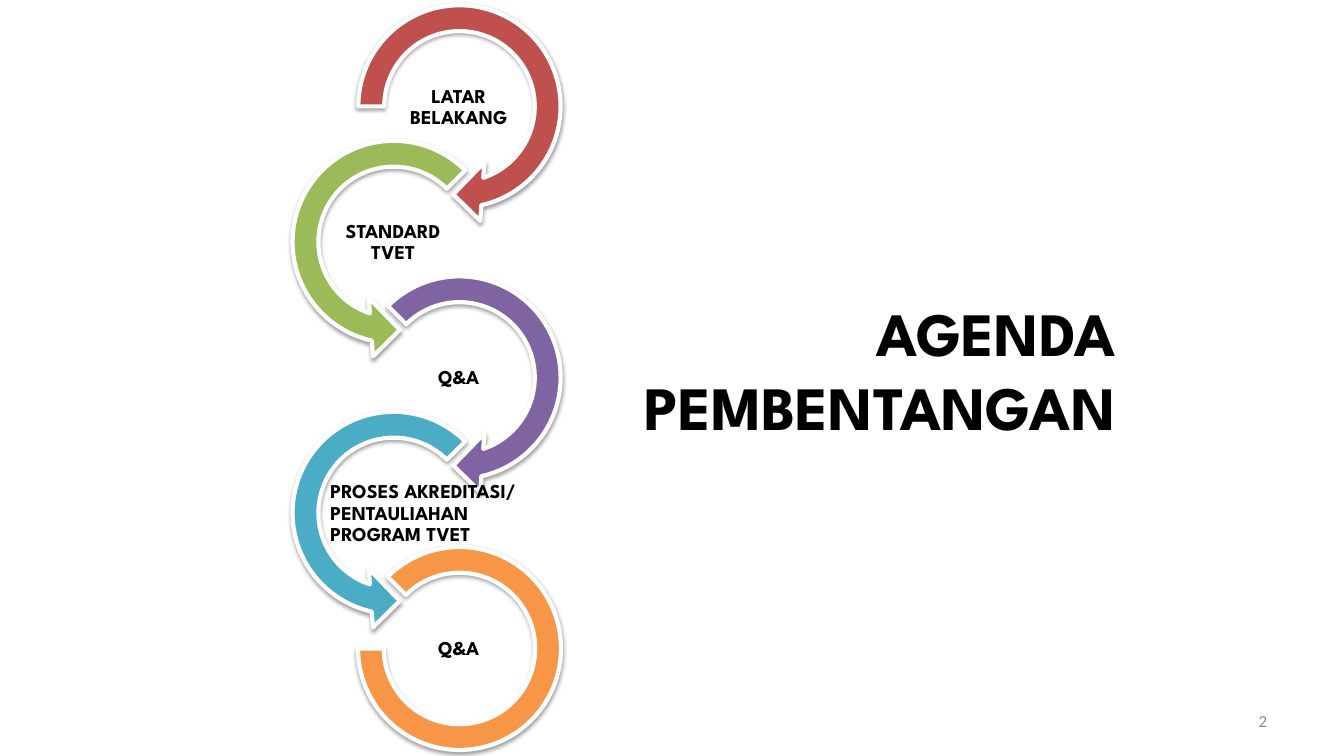
from lxml.etree import SubElement
from pptx import Presentation
from pptx.dml.color import RGBColor
from pptx.enum.shapes import MSO_SHAPE as SHAPE
from pptx.enum.text import MSO_ANCHOR as ANCHOR, PP_ALIGN as ALIGN
from pptx.oxml.ns import qn
from pptx.util import Pt

COLORS = {
    "red": "C0504D", "green": "9BBB59", "purple": "8064A2", "blue": "4BACC6",
    "orange": "F79646", "white": "FFFFFF", "black": "000000", "gray": "8C8C8C",
}
HEADING_FONT = "League Spartan"
RING = 168
STEP = 96.8
RIGHT_ARROW = (SHAPE.CIRCULAR_ARROW, (0.11, 11.42, 45, 135, 0.125))
LEFT_ARROW = (SHAPE.LEFT_CIRCULAR_ARROW, (0.11, 11.42, 63, 189, 0.125))
FIRST_ARROW = (SHAPE.CIRCULAR_ARROW, (0.11, 11.42, 45, 108, 0.125))
LAST_ARC = (SHAPE.BLOCK_ARC, (135, 108, 0.127))
AGENDA = [
    ("LATAR BELAKANG", "red", FIRST_ARROW),
    ("STANDARD TVET", "green", LEFT_ARROW),
    ("Q&A", "purple", RIGHT_ARROW),
    ("PROSES AKREDITASI/ PENTAULIAHAN PROGRAM TVET", "blue", LEFT_ARROW),
    ("Q&A", "orange", LAST_ARC),
]


def rgb(name):
    """Return the palette colour with the given name."""
    return RGBColor.from_string(COLORS[name])


def add_text(slide, text, x, y, w, h, size=14, font=HEADING_FONT, color="black",
             bold=True, align=ALIGN.CENTER, spacing=None, inset=None):
    """Add a wrapped, vertically centred text box."""
    tf = slide.shapes.add_textbox(Pt(x), Pt(y), Pt(w), Pt(h)).text_frame
    tf.word_wrap = True
    tf.vertical_anchor = ANCHOR.MIDDLE
    if inset is not None:
        tf.margin_left = tf.margin_right = tf.margin_top = tf.margin_bottom = Pt(inset)
    p = tf.paragraphs[0]
    p.alignment = align
    p.line_spacing = spacing
    r = p.add_run()
    r.text = text
    r.font.size = Pt(size)
    r.font.name = font
    r.font.bold = bold
    r.font.color.rgb = rgb(color)


def add_shadow(sp):
    """Give the shape a soft shadow straight below it."""
    sp.shadow.inherit = False
    effects = sp._element.spPr.find(qn("a:effectLst"))
    shadow = SubElement(effects, qn("a:outerShdw"), blurRad=str(Pt(3.1)),
                        dist=str(Pt(1.6)), dir="5400000", rotWithShape="0")
    black = SubElement(shadow, qn("a:srgbClr"), val=COLORS["black"])
    SubElement(black, qn("a:alpha"), val="38000")


def add_ring(slide, x, y, size, color, kind):
    """Draw one agenda ring inside a square box."""
    preset, adjustments = kind
    inset = 11.5 if preset == SHAPE.BLOCK_ARC else 0
    side = size - 2 * inset
    sp = slide.shapes.add_shape(preset, Pt(x + inset), Pt(y + inset), Pt(side), Pt(side))
    for i, value in enumerate(adjustments):
        sp.adjustments[i] = value
    sp.fill.solid()
    sp.fill.fore_color.rgb = rgb(color)
    sp.line.color.rgb = rgb("white")
    sp.line.width = Pt(3)
    add_shadow(sp)


def add_agenda(slide, x, y):
    """Chain the agenda rings downwards, alternating right and left."""
    for i, (text, color, kind) in enumerate(AGENDA):
        left = x if i % 2 else x + 47
        top = y + i * STEP
        add_ring(slide, left, top, RING, color, kind)
        long = len(text) > 20
        add_text(slide, text, left + (38.2 if long else 36.8), top + 61.2,
                 136.8 if long else 93.6, 46.8, spacing=0.9, inset=0.7,
                 align=ALIGN.LEFT if long else ALIGN.CENTER)


def main():
    """Build and save the agenda slide."""
    prs = Presentation()
    prs.slide_width, prs.slide_height = Pt(960), Pt(540)
    slide = prs.slides.add_slide(prs.slide_layouts[6])
    add_text(slide, "2", 688.3, 500.4, 223.9, 28.8, size=12, font="Calibri",
             color="gray", bold=False, align=ALIGN.RIGHT)
    add_agenda(slide, 197.2, -8)
    add_text(slide, "AGENDA PEMBENTANGAN", 356.4, 218.2, 447.8, 90.7,
             size=44, align=ALIGN.RIGHT)
    prs.save("out.pptx")


if __name__ == "__main__":
    main()
